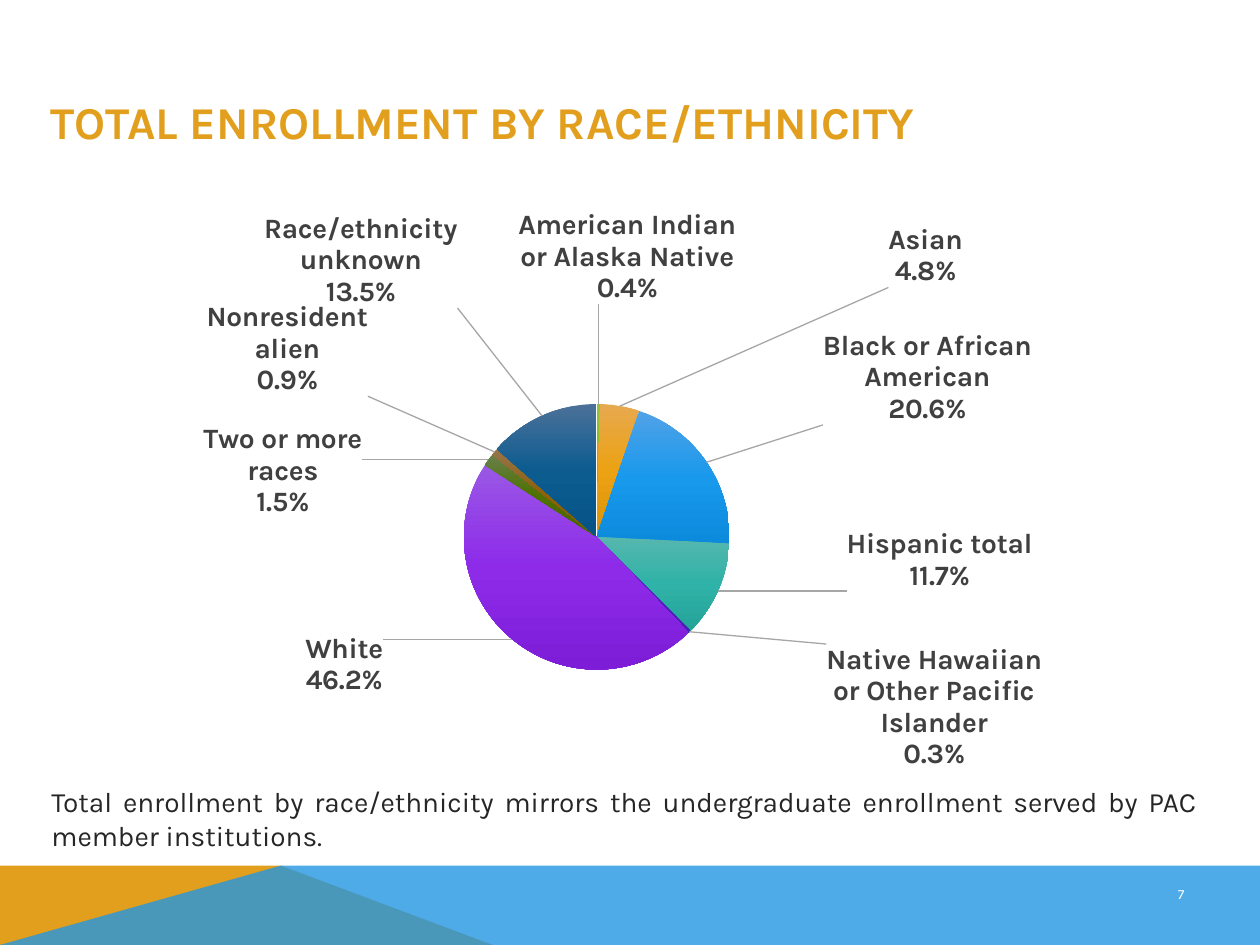
from copy import deepcopy

from lxml import etree
from pptx import Presentation
from pptx.chart.data import CategoryChartData
from pptx.dml.color import RGBColor
from pptx.enum.chart import XL_CHART_TYPE
from pptx.enum.text import MSO_ANCHOR, PP_ALIGN
from pptx.oxml import parse_xml
from pptx.util import Inches, Pt

PIE = XL_CHART_TYPE.PIE
LEFT, CENTER, JUSTIFY = PP_ALIGN.LEFT, PP_ALIGN.CENTER, PP_ALIGN.JUSTIFY
TOP, MIDDLE = MSO_ANCHOR.TOP, MSO_ANCHOR.MIDDLE
FONT = "Karla"
GOLD = RGBColor(0xE2, 0x9F, 0x1D)
BLUE = RGBColor(0x23, 0x97, 0xE2)
WHITE = RGBColor(0xFF, 0xFF, 0xFF)
BLACK = RGBColor(0, 0, 0)
INK = RGBColor(0x26, 0x26, 0x26)
NS_A = "http://schemas.openxmlformats.org/drawingml/2006/main"
NS_C = "http://schemas.openxmlformats.org/drawingml/2006/chart"

prs = Presentation()
prs.slide_width, prs.slide_height = Inches(10), Inches(7.5)
slide = prs.slides.add_slide(prs.slide_layouts[6])
shapes = slide.shapes


def add_band(points, color):
    spots = [(Inches(x), Inches(y)) for x, y in points]
    form = shapes.build_freeform(*spots[0])
    form.add_line_segments(spots[1:], close=True)
    band = form.convert_to_shape()
    band.shadow.inherit = False
    band.fill.solid()
    band.fill.fore_color.rgb = color
    band.line.fill.background()
    return band


def add_text(box, text, size, color, align=LEFT, anchor=TOP, bold=False):
    frame = shapes.add_textbox(*[Inches(n) for n in box]).text_frame
    frame.word_wrap = True
    frame.vertical_anchor = anchor
    para = frame.paragraphs[0]
    para.text = text
    para.alignment = align
    font = para.runs[0].font
    font.name, font.size, font.bold = FONT, Pt(size), bold
    font.color.rgb = color


# Footer bands, the blue one see-through
add_band([(0, 7.5), (0, 6.87), (2.23, 6.87), (3.91, 7.5)], GOLD)
band = add_band([(0, 7.5), (2.23, 6.87), (10, 6.87), (10, 7.5)], BLUE)
tint = band.fill._xPr.find(f".//{{{NS_A}}}srgbClr")
etree.SubElement(tint, f"{{{NS_A}}}alpha").set("val", "80000")

# Page number and title
add_text((9.11, 6.98, 0.53, 0.56), "7", 8, WHITE, CENTER)
add_text((0.3, 0.66, 9.16, 0.6), "TOTAL ENROLLMENT BY RACE/ETHNICITY",
         26, GOLD, anchor=MIDDLE, bold=True)

# Slices: name (| breaks its label), percent, gradient, label shift in inches
SLICES = [
    ("American Indian|or Alaska Native ", 0.4, "8FC14B 82BC00 74A700", (0.23, -1.6)),
    (" Asian ", 4.8, "E7A94F ECA213 DA9308", (2.73, -1.5)),
    (" Black or African|American ", 20.6, "51A2E7 1999EC 0C8ADC", (2.63, -1.08)),
    (" Hispanic total", 11.7, "57B7AE 2FB2A7 25A399", (2.55, 0.03)),
    (" Native Hawaiian|or Other Pacific|Islander", 0.3, "6B55C5 5129C2 451EB3", (2.84, 1.14)),
    (" White ", 46.2, "9A58E5 8D2BE9 7E1DD8", (-1.68, 0.5)),
    (" Two or more|races", 1.5, "67804B 4E7100 456400", (-2.31, -0.32)),
    (" Nonresident|alien", 0.9, "96744C 8E610B 835805", (-2.33, -1.23)),
    ("  Race/ethnicity|unknown ", 13.5, "4C7199 0C5C90 065386", (-2.23, -1.66)),
]
WIDE, HIGH = 9.49, 4.89

# Pie chart
data = CategoryChartData()
data.categories = [item[0].replace("|", " ") for item in SLICES]
data.add_series("Series 1", [item[1] for item in SLICES])
chart = shapes.add_chart(PIE, Inches(0), Inches(1.29), Inches(WIDE),
                         Inches(HIGH), data).chart
chart.has_legend = chart.has_title = False
chart.font.name, chart.font.size = FONT, Pt(10)
chart.font.color.rgb = BLACK
plot = chart.plots[0]
plot.vary_by_categories = True
series = plot.series[0]

# Plot area
area = chart._chartSpace.find(f".//{{{NS_C}}}plotArea")
for old in area.findall(f"{{{NS_C}}}layout"):
    area.remove(old)
area.insert(0, parse_xml(
    f'<c:layout xmlns:c="{NS_C}"><c:manualLayout><c:layoutTarget val="inner"/>'
    '<c:xMode val="edge"/><c:yMode val="edge"/><c:x val="0.275"/>'
    '<c:y val="0.392"/><c:w val="0.448"/><c:h val="0.431"/>'
    '</c:manualLayout></c:layout>'))

# Slice gradients, three stops each
for i, item in enumerate(SLICES):
    look = series.points[i].format
    look.line.fill.background()
    look.fill.gradient()
    look.fill.gradient_angle = 270
    first = look.fill.gradient_stops[0]._gs
    first.addnext(deepcopy(first))
    for k, (stop, code) in enumerate(zip(look.fill.gradient_stops, item[2].split())):
        stop.position = k / 2
        stop.color.rgb = RGBColor.from_string(code)

# Slice labels with leader lines
LOOK = ('sz="1600" b="1"><a:solidFill><a:srgbClr val="404040"/></a:solidFill>'
        f'<a:latin typeface="{FONT}"/>')
BODY = '<a:bodyPr wrap="none" anchor="ctr"/>'
HEAD = f'<a:pPr><a:defRPr {LOOK}</a:defRPr></a:pPr>'
STYLE = (
    '<c:numFmt formatCode="0.0%" sourceLinked="0"/>'
    '<c:spPr><a:noFill/><a:ln><a:noFill/></a:ln></c:spPr>'
    f'<c:txPr>{BODY}<a:p>{HEAD}</a:p></c:txPr>'
    '<c:dLblPos val="inEnd"/><c:showLegendKey val="0"/><c:showVal val="0"/>'
    '<c:showCatName val="1"/><c:showSerName val="0"/><c:showPercent val="1"/>'
    '<c:showBubbleSize val="0"/><c:separator>\n</c:separator>')
labels = ""
for i, (name, share, _, (x, y)) in enumerate(SLICES):
    lines = name.strip().split("|") + [f"{share}%"]
    paras = "".join(f'<a:p>{HEAD}<a:r><a:rPr {LOOK}</a:rPr><a:t>{line}</a:t></a:r></a:p>'
                    for line in lines)
    labels += (
        f'<c:dLbl><c:idx val="{i}"/><c:layout><c:manualLayout>'
        f'<c:x val="{x / WIDE}"/><c:y val="{y / HIGH}"/></c:manualLayout></c:layout>'
        f'<c:tx><c:rich>{BODY}{paras}</c:rich></c:tx>{STYLE}</c:dLbl>')
block = parse_xml(
    f'<c:dLbls xmlns:c="{NS_C}" xmlns:a="{NS_A}">{labels}{STYLE}'
    '<c:showLeaderLines val="1"/><c:leaderLines><c:spPr><a:ln w="9525"><a:solidFill>'
    '<a:srgbClr val="A6A6A6"/></a:solidFill></a:ln></c:spPr></c:leaderLines></c:dLbls>')
series._element.find(f"{{{NS_C}}}cat").addprevious(block)

# Closing remark
add_text((0.31, 6.18, 9.29, 0.65),
         "Total enrollment by race/ethnicity mirrors the undergraduate "
         "enrollment served by PAC member institutions. ", 16, INK, JUSTIFY)

prs.save("out.pptx")
